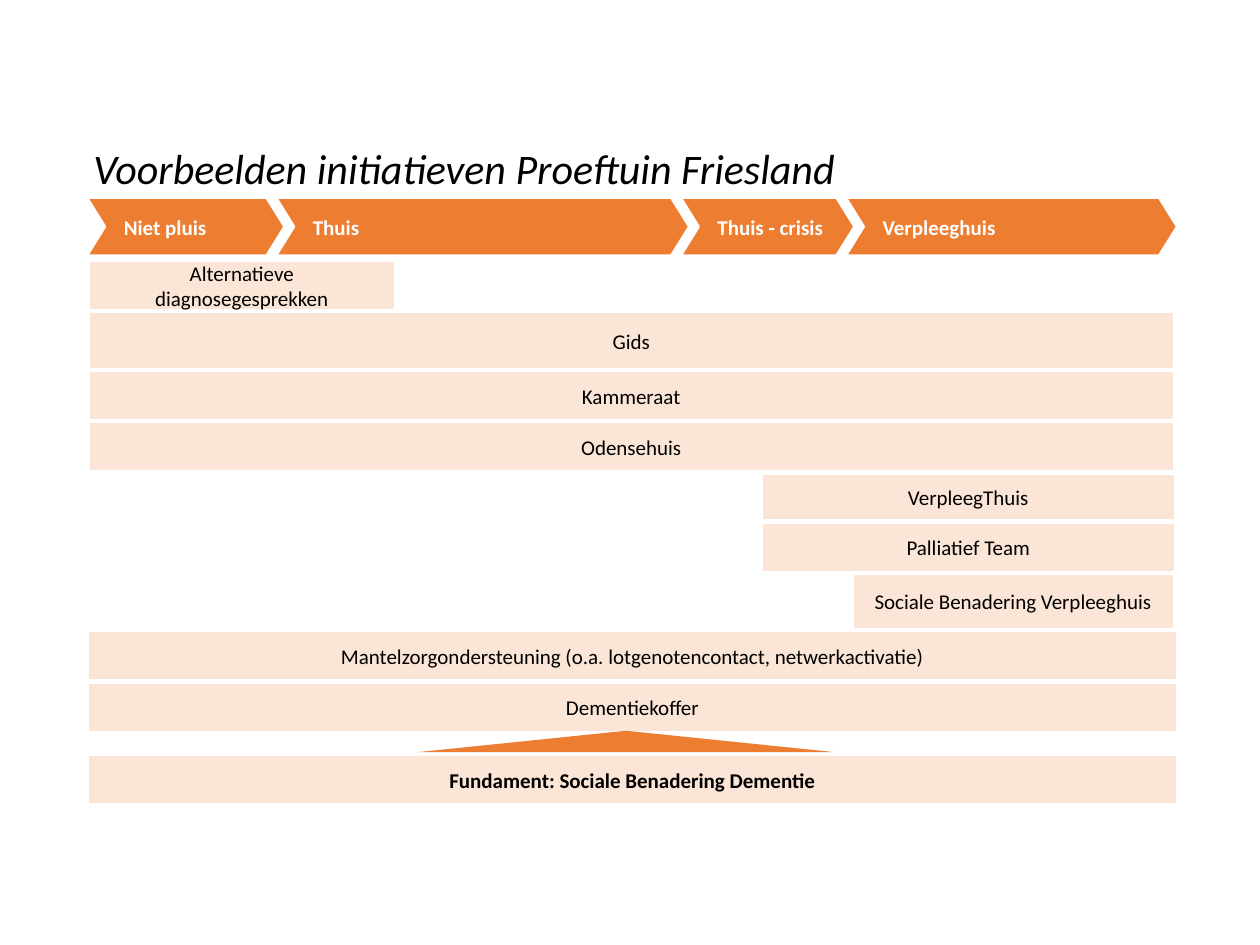
import pptx
import pptx.dml.color
import pptx.enum.shapes
import pptx.enum.text
import pptx.util

Pt = pptx.util.Pt
RGBColor = pptx.dml.color.RGBColor
Shape = pptx.enum.shapes.MSO_SHAPE
Align = pptx.enum.text.PP_ALIGN

ORANGE = RGBColor(0xED, 0x7D, 0x31)
PEACH = RGBColor(0xFB, 0xE5, 0xD6)
BLACK = RGBColor(0, 0, 0)
WHITE = RGBColor(0xFF, 0xFF, 0xFF)

PHASES_LEFT, PHASES_TOP, PHASE_HEIGHT, PHASE_OVERLAP = 49.7, 113, 33.1, 5
PHASES = [("Niet pluis", 113), ("Thuis", 236.2), ("Thuis - crisis", 99.4), ("Verpleeghuis", 189.4)]

BARS_TOP, BAR_GAP, BAR_HEIGHT = 150.3, 3.4, 25.9
FULL = (51.8, 617.8)
WIDE = (51.1, 620.6)
LATE = (436.3, 234)
INITIATIVES = [  # text, (left, width), height
    ("Alternatieve diagnosegesprekken", (51.8, 172.8), BAR_HEIGHT),
    ("Gids", FULL, 30.2),
    ("Kammeraat", FULL, BAR_HEIGHT),
    ("Odensehuis", FULL, BAR_HEIGHT),
    ("VerpleegThuis", LATE, 24.5),
    ("Palliatief Team", LATE, BAR_HEIGHT),
    ("Sociale Benadering Verpleeghuis", (488.2, 181.4), 29.5),
    ("Mantelzorgondersteuning (o.a. lotgenotencontact, netwerkactivatie)", WIDE, BAR_HEIGHT),
    ("Dementiekoffer", WIDE, BAR_HEIGHT),
]


class SlideBuilder:
    font_name = "Calibri"
    title_size = 24
    text_size = 12

    def __init__(self, slide):
        self.slide = slide

    def set_text(self, shape, text, size, color, align, bold=False, italic=False):
        frame = shape.text_frame
        frame.word_wrap = True
        frame.vertical_anchor = pptx.enum.text.MSO_ANCHOR.MIDDLE
        frame.text = text
        paragraph = frame.paragraphs[0]
        paragraph.alignment = align
        font = paragraph.font
        font.name, font.size = self.font_name, Pt(size)
        font.bold, font.italic = bold, italic
        font.color.rgb = color

    def set_margins(self, shape, left, top, right, bottom):
        frame = shape.text_frame
        frame.margin_left, frame.margin_top = Pt(left), Pt(top)
        frame.margin_right, frame.margin_bottom = Pt(right), Pt(bottom)

    def title(self, text, left, top, width, height):
        shape = self.slide.shapes.title
        shape.left, shape.top = Pt(left), Pt(top)
        shape.width, shape.height = Pt(width), Pt(height)
        self.set_text(shape, text, self.title_size, BLACK, Align.LEFT, italic=True)
        shape.text_frame.auto_size = pptx.enum.text.MSO_AUTO_SIZE.NONE
        shape.text_frame.paragraphs[0].line_spacing = 0.9
        self.set_margins(shape, 3.6, 3.6, 3.6, 3.6)

    def filled_shape(self, kind, left, top, width, height, fill, line=None, line_width=1):
        shape = self.slide.shapes.add_shape(kind, Pt(left), Pt(top), Pt(width), Pt(height))
        shape.shadow.inherit = False
        shape.fill.solid()
        shape.fill.fore_color.rgb = fill
        if line is None:
            shape.line.fill.background()
        else:
            shape.line.color.rgb = line
            shape.line.width = Pt(line_width)
        return shape

    def bar(self, text, left, top, width, height, bold=False):
        shape = self.filled_shape(Shape.RECTANGLE, left, top, width, height, PEACH, PEACH)
        self.set_text(shape, text, self.text_size, BLACK, Align.CENTER, bold)

    def phase(self, text, left, top, width, height):
        shape = self.filled_shape(Shape.CHEVRON, left, top, width, height, ORANGE, WHITE, 1.5)
        shape.adjustments[0] = 0.31
        self.set_text(shape, text, self.text_size, WHITE, Align.LEFT, bold=True)
        self.set_margins(shape, 10.8, 3.6, 7.2, 3.6)

    def triangle(self, left, top, width, height):
        self.filled_shape(Shape.ISOSCELES_TRIANGLE, left, top, width, height, ORANGE)


def main():
    presentation = pptx.Presentation()
    presentation.slide_width, presentation.slide_height = Pt(720), Pt(540)
    title_only = presentation.slide_layouts[5]
    builder = SlideBuilder(presentation.slides.add_slide(title_only))

    builder.title("Voorbeelden initiatieven Proeftuin Friesland", 49.7, 58.3, 620.6, 78.5)

    top = BARS_TOP
    for text, (left, width), height in INITIATIVES:
        builder.bar(text, left, top, width, height)
        top += height + BAR_GAP
    left, width = WIDE
    builder.bar("Fundament: Sociale Benadering Dementie", left, 432.7, width, BAR_HEIGHT, bold=True)

    # Each phase lies on top of the start of the next one, so the last is drawn first.
    left = PHASES_LEFT + sum(width - PHASE_OVERLAP for _, width in PHASES)
    for text, width in reversed(PHASES):
        left -= width - PHASE_OVERLAP
        builder.phase(text, left, PHASES_TOP, width, PHASE_HEIGHT)

    builder.triangle(239, 417.6, 237.6, 12.2)
    presentation.save("out.pptx")


if __name__ == "__main__":
    main()
